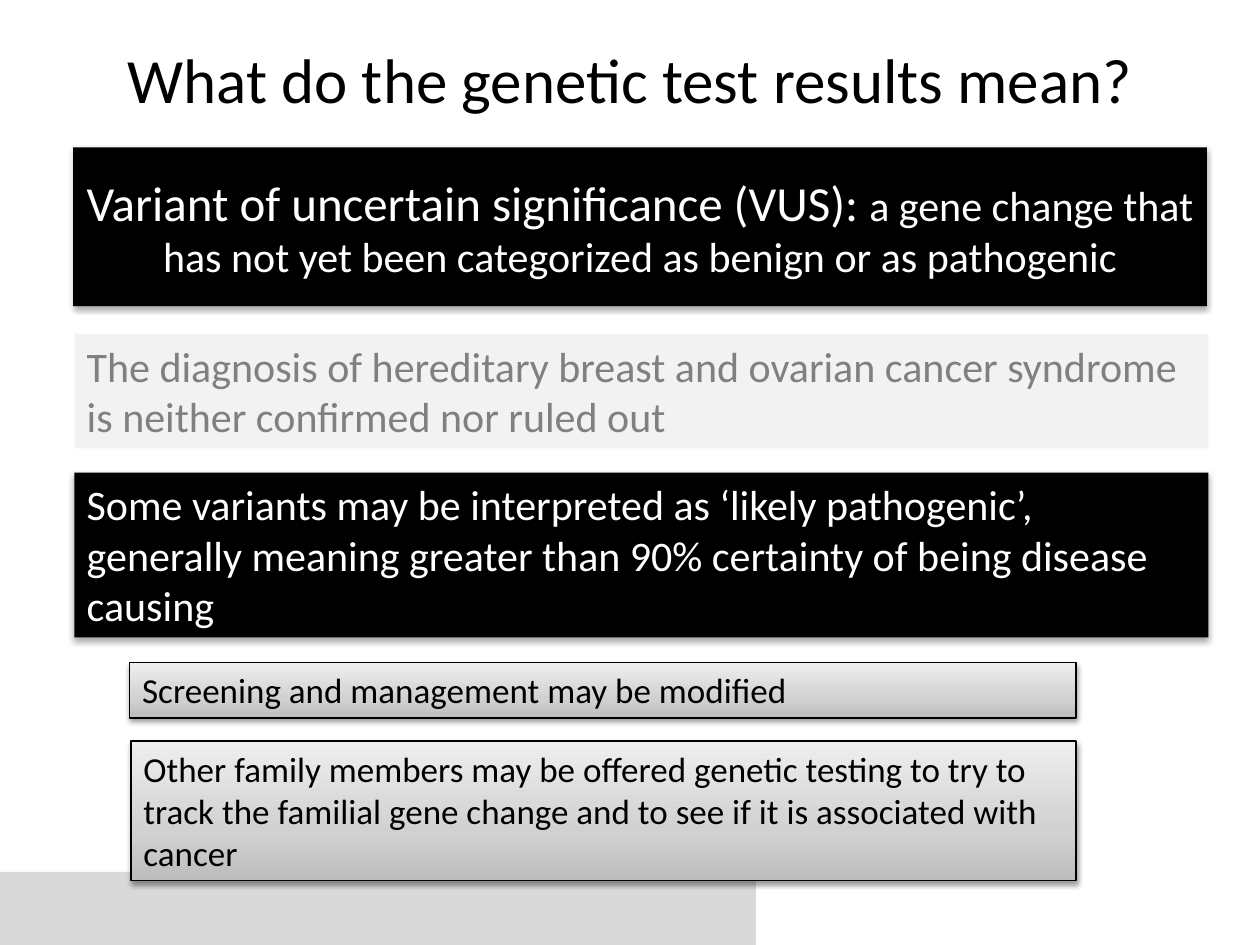
from dataclasses import dataclass
from typing import Optional

from lxml import etree
from pptx import Presentation
from pptx.dml.color import RGBColor
from pptx.enum.shapes import MSO_SHAPE
from pptx.enum.text import MSO_ANCHOR, PP_ALIGN
from pptx.oxml import parse_xml
from pptx.oxml.ns import nsdecls, qn
from pptx.util import Inches, Pt

BLACK = RGBColor(0x00, 0x00, 0x00)
WHITE = RGBColor(0xFF, 0xFF, 0xFF)
GRAY_TEXT = RGBColor(0x80, 0x80, 0x80)
PALE_GRAY = RGBColor(0xF2, 0xF2, 0xF2)
BAR_GRAY = RGBColor(0xD9, 0xD9, 0xD9)
GRADIENT_STOPS = (
    (0, RGBColor(0xBD, 0xBD, 0xBD)),
    (35, RGBColor(0xD1, 0xD1, 0xD1)),
    (100, RGBColor(0xEE, 0xEE, 0xEE)),
)
FONT_NAME = "Calibri"


@dataclass
class Shadow:
    opacity: int
    distance: float
    blur: float = 3.1


@dataclass
class Box:
    left: float
    top: float
    width: float
    height: float
    runs: tuple = ()  # (text, size in points)
    fill: Optional[RGBColor] = None  # None gives the outlined gradient
    color: RGBColor = BLACK
    shadow: Optional[Shadow] = None
    align: PP_ALIGN = PP_ALIGN.LEFT
    anchor: MSO_ANCHOR = MSO_ANCHOR.TOP


STRONG_SHADOW = Shadow(35, 1.8)
SOFT_SHADOW = Shadow(38, 1.6)

BOXES = (
    Box(0, 6.92, 6, 0.58, fill=BAR_GRAY),
    Box(0.58, 1.17, 9, 1.26,
        (("Variant of uncertain significance (VUS): ", 28),
         ("a gene change that has not yet been categorized as benign "
          "or as pathogenic", 24)),
        BLACK, WHITE, STRONG_SHADOW, PP_ALIGN.CENTER, MSO_ANCHOR.MIDDLE),
    Box(0.59, 2.65, 9, 0.91,
        (("The diagnosis of hereditary breast and ovarian cancer syndrome "
          "is neither confirmed nor ruled out", 24),),
        PALE_GRAY, GRAY_TEXT),
    Box(0.59, 3.75, 9, 1.31,
        (("Some variants may be interpreted as ‘likely pathogenic’, generally "
          "meaning greater than 90% certainty of being disease causing", 24),),
        BLACK, WHITE, STRONG_SHADOW),
    Box(1.03, 5.26, 7.51, 0.44,
        (("Screening and management may be modified", 20),),
        shadow=SOFT_SHADOW),
    Box(1.04, 5.88, 7.5, 1.11,
        (("Other family members may be offered genetic testing to try to track "
          "the familial gene change and to see if it is associated with "
          "cancer", 20),),
        shadow=SOFT_SHADOW),
)


def format_font(font, size: float, color: RGBColor) -> None:
    for name, value in {"name": FONT_NAME, "size": Pt(size)}.items():
        setattr(font, name, value)
    font.color.rgb = color


def set_gradient(shape) -> None:
    """Fill upwards from the darkest stop at the bottom edge."""
    stops = "".join(
        f'<a:gs pos="{position * 1000}"><a:srgbClr val="{color}"/></a:gs>'
        for position, color in GRADIENT_STOPS
    )
    gradient = parse_xml(
        f'<a:gradFill {nsdecls("a")} rotWithShape="1"><a:gsLst>{stops}</a:gsLst>'
        '<a:lin ang="16200000" scaled="0"/></a:gradFill>'
    )
    shape._element.spPr.find(qn("a:prstGeom")).addnext(gradient)


def add_shadow(shape, shadow: Shadow) -> None:
    effects = shape._element.spPr.find(qn("a:effectLst"))
    outer = etree.SubElement(
        effects, qn("a:outerShdw"), blurRad=str(Pt(shadow.blur)),
        dist=str(Pt(shadow.distance)), dir="5400000", rotWithShape="0")
    color = etree.SubElement(outer, qn("a:srgbClr"), val=str(BLACK))
    etree.SubElement(color, qn("a:alpha"), val=str(shadow.opacity * 1000))


def add_box(slide, box: Box) -> None:
    shape = slide.shapes.add_shape(
        MSO_SHAPE.RECTANGLE, Inches(box.left), Inches(box.top),
        Inches(box.width), Inches(box.height))
    shape.shadow.inherit = False
    if box.fill is None:
        set_gradient(shape)
        shape.line.color.rgb = BLACK
        shape.line.width = Pt(0.75)
    else:
        shape.fill.solid()
        shape.fill.fore_color.rgb = box.fill
        shape.line.fill.background()
    if box.shadow:
        add_shadow(shape, box.shadow)

    frame = shape.text_frame
    frame.word_wrap = True
    frame.vertical_anchor = box.anchor
    paragraph = frame.paragraphs[0]
    paragraph.alignment = box.align
    for text, size in box.runs:
        run = paragraph.add_run()
        run.text = text
        format_font(run.font, size, box.color)


def add_title(slide, text: str) -> None:
    title = slide.shapes.title
    position = {"left": 0.5, "top": 0, "width": 9, "height": 1.25}
    for name, value in position.items():
        setattr(title, name, Inches(value))
    title.text_frame.text = text
    title.text_frame.vertical_anchor = MSO_ANCHOR.MIDDLE
    paragraph = title.text_frame.paragraphs[0]
    paragraph.alignment = PP_ALIGN.CENTER
    format_font(paragraph.runs[0].font, 36, BLACK)


def main() -> None:
    presentation = Presentation()
    presentation.slide_width = Inches(10)
    presentation.slide_height = Inches(7.5)
    slide = presentation.slides.add_slide(presentation.slide_layouts[5])
    add_title(slide, "What do the genetic test results mean?")
    for box in BOXES:
        add_box(slide, box)
    presentation.save("out.pptx")


if __name__ == "__main__":
    main()
